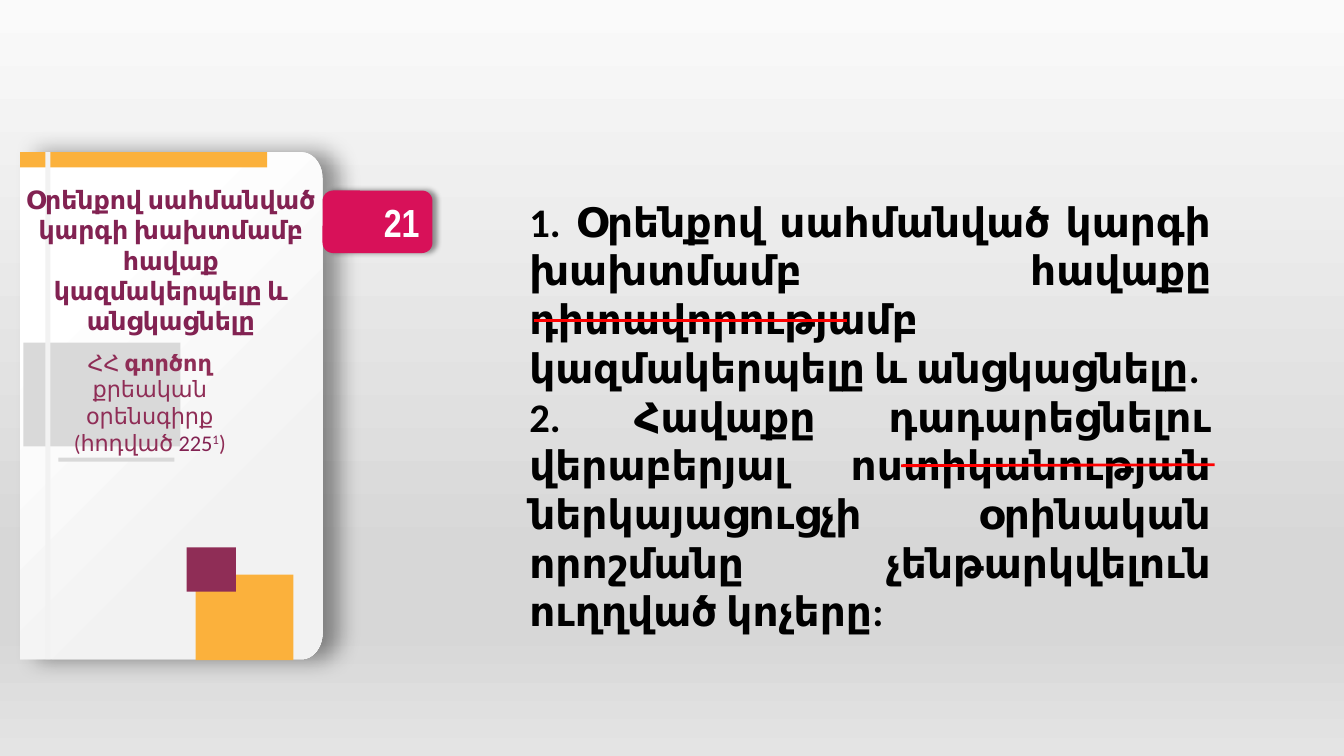
from math import cos, sin, pi

from lxml.etree import SubElement as Sub
from pptx import Presentation
from pptx.dml.color import RGBColor as RGB
from pptx.enum.shapes import MSO_CONNECTOR as Conn, MSO_SHAPE as Kind
from pptx.enum.text import MSO_ANCHOR as Anchor, MSO_AUTO_SIZE as Fit, PP_ALIGN as Align
from pptx.oxml.ns import qn
from pptx.util import Inches, Pt

BLACK = RGB(0x00, 0x00, 0x00)
WHITE = RGB(0xFF, 0xFF, 0xFF)
PALE = RGB(0xF2, 0xF2, 0xF2)
GREY = RGB(0xD9, 0xD9, 0xD9)
PINK = RGB(0xD8, 0x11, 0x59)
AMBER = RGB(0xFB, 0xB1, 0x3C)
PLUM = RGB(0x8F, 0x2D, 0x56)
WINE = RGB(0x82, 0x22, 0x52)
RED = RGB(0xFF, 0x00, 0x00)
# Backdrop shades
MIST = RGB(0xFA, 0xFA, 0xFA)
ASH = RGB(0xD7, 0xD7, 0xD7)
FOG = RGB(0xE4, 0xE4, 0xE4)


def write(frame, paras, size, color, font="Calibri", bold=False,
          align=Align.CENTER, anchor=Anchor.TOP):
    """Fill a frame; each paragraph is a list of (text, changes) runs."""
    frame.word_wrap = True
    frame.auto_size = Fit.NONE
    frame.vertical_anchor = anchor
    for i, runs in enumerate(paras):
        para = frame.paragraphs[0] if i == 0 else frame.add_paragraph()
        para.alignment = align
        para.space_before = Pt(0)
        for text, diff in runs:
            run = para.add_run()
            run.text = text
            run.font.name = font
            run.font.size = Pt(size)
            run.font.bold = diff.get("bold", bold)
            run.font.color.rgb = diff.get("color", color)
            if "raised" in diff:
                run.font._element.set("baseline", str(diff["raised"] * 1000))


def blend(fill, root, stops, angle):
    """Give a fill a linear gradient of (percent, colour) stops."""
    fill.gradient()
    grad = root.find(".//" + qn("a:gradFill"))
    for child in list(grad):
        grad.remove(child)
    group = Sub(grad, qn("a:gsLst"))
    for place, color in stops:
        stop = Sub(group, qn("a:gs"), pos=str(place * 1000))
        Sub(stop, qn("a:srgbClr"), val=str(color))
    Sub(grad, qn("a:lin"), ang=str(angle * 60000), scaled="0")


class Deck:
    """Lengths are percentages of the slide's width and height."""

    def __init__(self):
        self.show = Presentation()
        self.show.slide_width = Inches(13.33)
        self.show.slide_height = Inches(7.5)
        self.slide = self.show.slides.add_slide(self.show.slide_layouts[1])
        self.shapes = self.slide.shapes

    def spot(self, x, y):
        return (round(self.show.slide_width * x / 100),
                round(self.show.slide_height * y / 100))

    def box(self, x, y, w, h):
        return self.spot(x, y) + self.spot(w, h)

    def paint(self, shape, color):
        shape.shadow.inherit = False
        shape.line.fill.background()
        if color is not None:
            shape.fill.solid()
            shape.fill.fore_color.rgb = color
        return shape

    def block(self, area, color, kind=Kind.RECTANGLE):
        return self.paint(self.shapes.add_shape(kind, *self.box(*area)), color)

    def shade(self, shape, blur, dist):
        """Cast a soft black shadow to the right."""
        glow = Sub(shape._element.spPr.find(qn("a:effectLst")), qn("a:outerShdw"),
                   blurRad=str(Pt(blur)), dist=str(Pt(dist)), dir="0",
                   algn="l", rotWithShape="0")
        tint = Sub(glow, qn("a:srgbClr"), val=str(BLACK))
        Sub(tint, qn("a:alpha"), val="40000")

    def card(self, x, y, w, h, rx, ry):
        """Draw a panel whose two right corners are round."""
        turns = [pi / 2 * i / 16 for i in range(17)]
        right, low = x + w, y + h
        path = [(right - rx + rx * sin(t), y + ry - ry * cos(t)) for t in turns]
        path += [(right - rx + rx * cos(t), low - ry + ry * sin(t)) for t in turns]
        path.append((x, low))
        pen = self.shapes.build_freeform(*self.spot(x, y))
        pen.add_line_segments([self.spot(*p) for p in path], close=True)
        shape = self.paint(pen.convert_to_shape(), None)
        blend(shape.fill, shape._element, [(22, WHITE), (74, PALE)], 45)
        return shape

    def holder(self, shape, area, paras, **style):
        """Move a template placeholder to the front and fill it."""
        shape.left, shape.top, shape.width, shape.height = self.box(*area)
        self.shapes._spTree.append(shape._element)
        write(shape.text_frame, paras, **style)
        for para in shape.text_frame.paragraphs:
            props = para._p.get_or_add_pPr()
            props.set("marL", "0")
            props.set("indent", "0")
            Sub(props, qn("a:buNone"))

    def label(self, area, paras, **style):
        write(self.shapes.add_textbox(*self.box(*area)).text_frame, paras, **style)

    def strike(self, start, end):
        line = self.shapes.add_connector(Conn.STRAIGHT, *self.spot(*start), *self.spot(*end))
        line.line.color.rgb = RED
        line.line.width = Pt(2)
        Sub(line._element.spPr, qn("a:effectLst"))


def main():
    deck = Deck()
    slide = deck.slide
    blend(slide.background.fill, slide._element,
          [(0, MIST), (74, ASH), (83, ASH), (100, FOG)], 90)

    # Provisions of the article
    deck.holder(slide.placeholders[1], (38.63, 25.33, 52.28, 53.47), [
        [("1. Օրենքով սահմանված կարգի խախտմամբ հավաքը դիտավորությամբ "
          "կազմակերպելը և անցկացնելը.", {})],
        [("2. Հավաքը դադարեցնելու վերաբերյալ ոստիկանության ներկայացուցչի "
          "օրինական որոշմանը չենթարկվելուն ուղղված կոչերը:", {})],
    ], size=29, color=BLACK, bold=True, align=Align.JUSTIFY)

    # Card and number tab
    left, top, tall = 1.5, 20.13, 67.07
    deck.shade(deck.card(left, top, 22.5, tall, 1.58, 3.47), 16, 12)
    tab = deck.block((24, 25.2, 8.18, 8.27), PINK, Kind.ROUNDED_RECTANGLE)
    deck.shade(tab, 4, 3)
    write(tab.text_frame, [[("21", {})]], size=28, color=WHITE, font="Arial Narrow",
          bold=True, align=Align.RIGHT, anchor=Anchor.MIDDLE)

    # Card bands
    for area, color in [
        ((left, top, 18.38, 2), AMBER),
        ((1.73, 45.33, 11.7, 13.73), GREY),
        ((3.38, top, 0.38, tall), PALE),
        ((4.35, 60.53, 8.63, 0.53), GREY),
    ]:
        deck.block(area, color)

    # Card wording
    deck.label((4.43, 45.47, 13.43, 15.73), [
        [("ՀՀ ", {}), ("գործող", {"bold": True}), (" քրեական օրենսգիրք", {})],
        [("(հոդված ", {}), ("225", {"color": WINE}),
         ("1", {"color": WINE, "raised": 30}), (")", {})],
    ], size=16, color=PLUM)
    deck.holder(slide.shapes.title, (0.6, 23.73, 24.23, 17.47), [
        [("Օրենքով սահմանված կարգի խախտմամբ հավաք կազմակերպելը և անցկացնելը", {})],
    ], size=18, color=WINE, bold=True)

    # Corner squares
    deck.block((14.55, 76, 7.28, 11.33), AMBER)
    deck.block((13.88, 72.4, 3.68, 5.87), PLUM)

    # Struck-out words
    deck.strike((67.05, 61.6), (90.38, 61.47))
    deck.strike((39.75, 42.4), (63, 42.4))

    deck.show.save("out.pptx")


if __name__ == "__main__":
    main()
